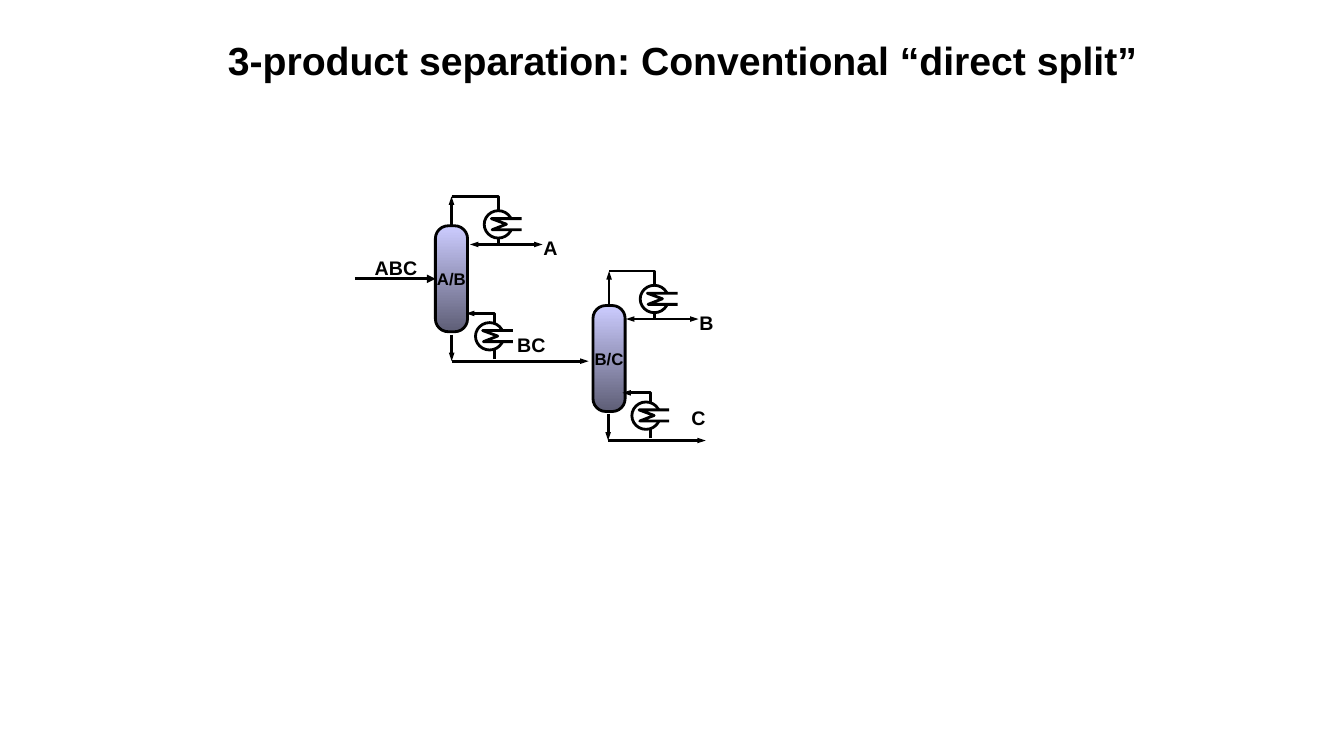
from dataclasses import dataclass
from typing import NamedTuple

from lxml.etree import SubElement
from pptx import Presentation
from pptx.dml.color import RGBColor
from pptx.enum.shapes import MSO_CONNECTOR, MSO_SHAPE
from pptx.enum.text import MSO_ANCHOR, PP_ALIGN
from pptx.oxml.ns import qn
from pptx.util import Cm, Pt

FONT = "Arial"
BLACK, WHITE = "000000", "FFFFFF"
SHELL_TOP, SHELL_BOTTOM = "CCCCFF", "5E5E76"
COLUMN_WIDTH, COLUMN_HEIGHT = 0.81, 2.67


class Point(NamedTuple):
    """A position on the slide in centimetres."""
    x: float
    y: float

    def shift(self, dx: float, dy: float) -> "Point":
        return Point(self.x + dx, self.y + dy)


@dataclass
class Column:
    name: str
    corner: Point
    head: Point  # top left of the overhead loop
    foot: Point  # where the bottoms pipe turns right
    bottoms_end: float


@dataclass
class Label:
    text: str
    corner: Point
    width: float


COLUMNS = [
    Column("A/B", Point(10.97, 5.69), Point(11.36, 4.95), Point(11.38, 9.1), 14.83),
    Column("B/C", Point(14.94, 7.7), Point(15.29, 6.83), Point(15.32, 11.1), 17.78),
]
LABELS = [
    Label("ABC", Point(9.19, 6.32), 2.0),
    Label("A", Point(13.44, 5.82), 0.81),
    Label("BC", Point(12.78, 8.26), 1.6),
    Label("B", Point(17.37, 7.7), 0.81),
    Label("C", Point(17.17, 10.11), 1.6),
]
COIL = [(0.94, 0.48), (0.2, 0.48), (0.56, 0.34), (0.18, 0.2), (0.94, 0.2)]


def color(value: str) -> RGBColor:
    return RGBColor.from_string(value)


def write(box, text: str, *, size: float, align=PP_ALIGN.LEFT,
          anchor=MSO_ANCHOR.TOP, wrap=True, inset_x=0.0, inset_y=0.0) -> None:
    frame = box.text_frame
    frame.word_wrap = wrap
    frame.vertical_anchor = anchor
    frame.margin_left = frame.margin_right = Cm(inset_x)
    frame.margin_top = frame.margin_bottom = Cm(inset_y)
    para = frame.paragraphs[0]
    para.alignment = align
    span = para.add_run()
    span.text = text
    span.font.name = FONT
    span.font.size = Pt(size)
    span.font.bold = True
    span.font.color.rgb = color(BLACK)


def outline(shape, head: bool = False, tail: bool = False, width: str = "sm") -> None:
    """Give a black 2 pt line with optional arrowheads."""
    shape.line.width = Pt(2)
    shape.line.fill.solid()
    shape.line.fill.fore_color.rgb = color(BLACK)
    line = shape.element.spPr.find(qn("a:ln"))
    for tag, wanted in (("a:headEnd", head), ("a:tailEnd", tail)):
        if wanted:
            SubElement(line, qn(tag), type="triangle", w=width, len="med")


def add_pipe(page, start: Point, end: Point, **arrows):
    pipe = page.shapes.add_connector(
        MSO_CONNECTOR.STRAIGHT, Cm(start.x), Cm(start.y), Cm(end.x), Cm(end.y))
    outline(pipe, **arrows)
    SubElement(pipe.element.spPr, qn("a:effectLst"))
    return pipe


def add_polyline(shapes, points: list[Point], fill: str | None = None, **arrows) -> None:
    vertices = [(Cm(point.x), Cm(point.y)) for point in points]
    builder = shapes.build_freeform(*vertices[0])
    builder.add_line_segments(vertices[1:], close=False)
    bend = builder.convert_to_shape()
    bend.shadow.inherit = False
    if fill:
        bend.fill.solid()
        bend.fill.fore_color.rgb = color(fill)
    else:
        bend.fill.background()
    outline(bend, **arrows)


def add_exchanger(page, corner: Point) -> None:
    group = page.shapes.add_group_shape()
    circle = group.shapes.add_shape(
        MSO_SHAPE.OVAL, Cm(corner.x), Cm(corner.y), Cm(0.71), Cm(0.69))
    circle.shadow.inherit = False
    circle.fill.solid()
    circle.fill.fore_color.rgb = color(WHITE)
    outline(circle)
    add_polyline(group.shapes, [corner.shift(*step) for step in COIL], fill=WHITE)


def add_shell(page, column: Column):
    shell = page.shapes.add_shape(
        MSO_SHAPE.ROUNDED_RECTANGLE, Cm(column.corner.x), Cm(column.corner.y),
        Cm(COLUMN_WIDTH), Cm(COLUMN_HEIGHT))
    shell.adjustments[0] = 0.4
    shell.shadow.inherit = False
    shell.fill.gradient()
    shell.fill.gradient_angle = 270
    for stop, shade in zip(shell.fill.gradient_stops, (SHELL_TOP, SHELL_BOTTOM)):
        stop.color.rgb = color(shade)
    outline(shell)
    write(shell, column.name, size=12, align=PP_ALIGN.CENTER,
          anchor=MSO_ANCHOR.MIDDLE, wrap=False)
    return shell


def add_column(page, column: Column):
    """Draw a column with its condenser and reboiler loops; return its shell."""
    shell = add_shell(page, column)
    head, foot = column.head, column.foot
    center = column.corner.x + COLUMN_WIDTH / 2

    vapour = add_pipe(page, Point(center, column.corner.y), Point(center, head.y), tail=True)
    vapour.begin_connect(shell, 0)
    add_polyline(page.shapes, [Point(center, head.y), head.shift(1.2, 0), head.shift(1.2, 1.2)])
    add_pipe(page, head.shift(0.48, 1.21), head.shift(2.31, 1.21), head=True, tail=True)
    add_exchanger(page, head.shift(0.84, 0.36))

    add_pipe(page, foot, Point(column.bottoms_end, foot.y), tail=True)
    add_pipe(page, foot.shift(0, -0.67), foot, tail=True)
    add_polyline(page.shapes, [foot.shift(1.07, -0.05), foot.shift(1.07, -1.2),
                               foot.shift(0.36, -1.2)], tail=True)
    add_exchanger(page, foot.shift(0.6, -0.97))
    return shell


def main() -> None:
    deck = Presentation()
    deck.slide_width, deck.slide_height = Cm(33.86), Cm(19.05)
    page = deck.slides.add_slide(deck.slide_layouts[6])

    title = page.shapes.add_textbox(Cm(5.74), Cm(0.91), Cm(23.2), Cm(1.19))
    write(title, "3-product separation: Conventional “direct split”", size=28)

    shells = [add_column(page, column) for column in COLUMNS]
    inlet = COLUMNS[0].corner.shift(0, COLUMN_HEIGHT / 2)
    feed = add_pipe(page, Point(8.94, inlet.y), inlet, tail=True, width="med")
    feed.end_connect(shells[0], 1)

    for label in LABELS:
        box = page.shapes.add_textbox(
            Cm(label.corner.x), Cm(label.corner.y), Cm(label.width), Cm(0.84))
        write(box, label.text, size=14, inset_x=0.25, inset_y=0.13)

    deck.save("out.pptx")


if __name__ == "__main__":
    main()
